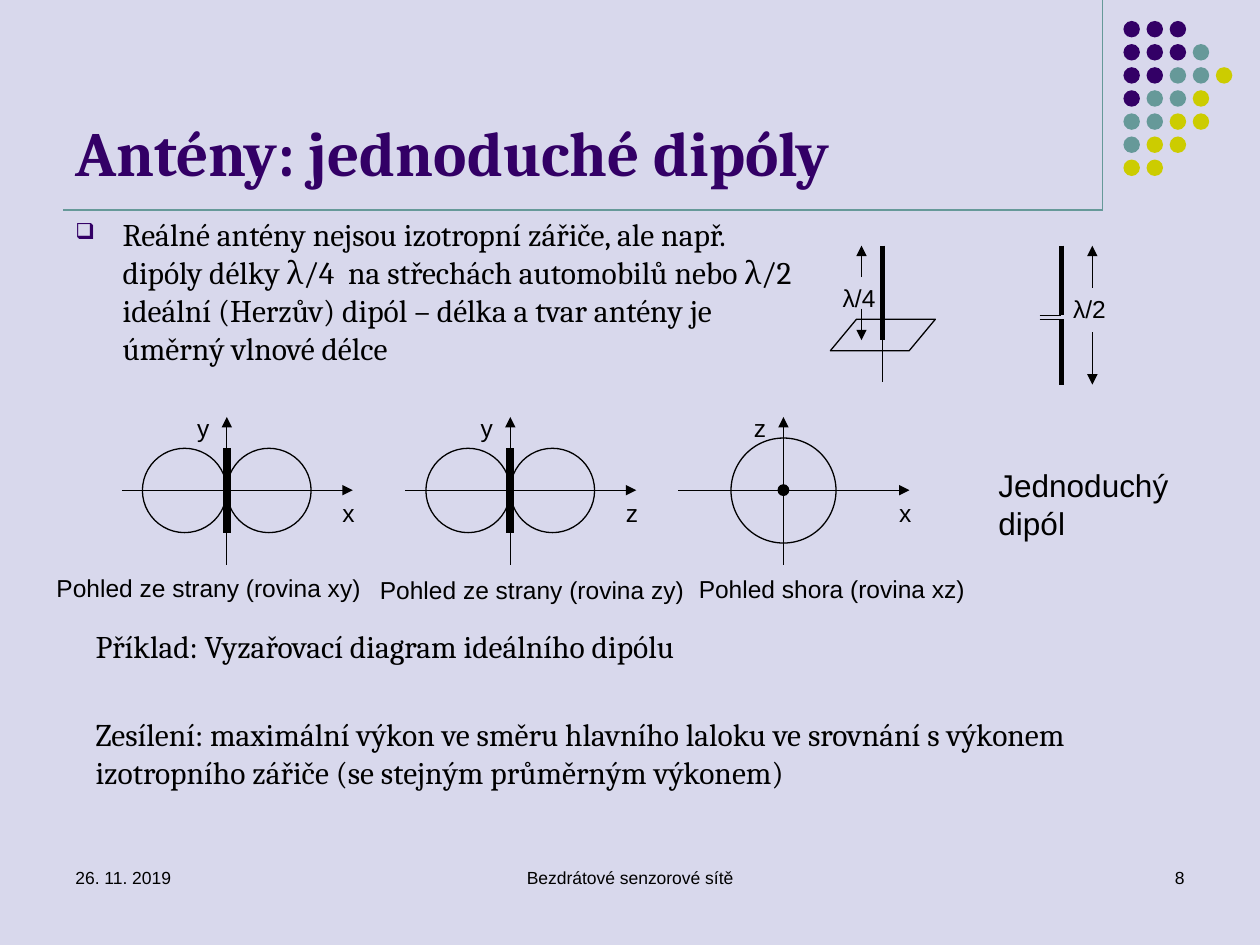
import pptx
import pptx.util
import pptx.dml.color
import pptx.enum.shapes
import pptx.enum.text
import pptx.oxml
import pptx.oxml.ns

Pt = pptx.util.Pt
RGB = pptx.dml.color.RGBColor
SHAPE = pptx.enum.shapes.MSO_SHAPE
ALIGN = pptx.enum.text.PP_ALIGN
ANCHOR = pptx.enum.text.MSO_ANCHOR

BACK = RGB(0xD8, 0xD8, 0xEC)
INK = RGB(0, 0, 0)
PLUM = RGB(0x33, 0x00, 0x66)
TEAL = RGB(0x66, 0x99, 0x99)
LIME = RGB(0xCC, 0xCC, 0x00)

DOTS = ["PPP", "PPPT", "PPTTL", "PTTL", "TTLL", "TLL", "LL"]
HUES = {"P": PLUM, "T": TEAL, "L": LIME}


def node(parent, tag, **attrs):
    item = pptx.oxml.ns.qn(tag)
    child = parent.makeelement(item, attrs)
    parent.append(child)
    return child


def line(slide, x1, y1, x2, y2, width=0.75, color=INK, arrow=False):
    link = slide.shapes.add_connector(
        pptx.enum.shapes.MSO_CONNECTOR.STRAIGHT, Pt(x1), Pt(y1), Pt(x2), Pt(y2))
    link.line.color.rgb = color
    link.line.width = Pt(width)
    if arrow:
        node(link.line._get_or_add_ln(), "a:tailEnd", type="triangle")
    node(link._element.spPr, "a:effectLst")


def shape(slide, kind, x, y, w, h, fill=None, edge=INK):
    form = slide.shapes.add_shape(kind, Pt(x), Pt(y), Pt(w), Pt(h))
    form.shadow.inherit = False
    if fill is None:
        form.fill.background()
    else:
        form.fill.solid()
        form.fill.fore_color.rgb = fill
    if edge is None:
        form.line.fill.background()
    else:
        form.line.color.rgb = edge
        form.line.width = Pt(0.75)
    return form


def disc(slide, x, y, size, fill=None, edge=INK):
    shape(slide, SHAPE.OVAL, x - size / 2, y - size / 2, size, size, fill, edge)


def text(slide, words, x, y, w, h, size, font="Arial", color=INK, bold=False,
         align=ALIGN.LEFT, anchor=ANCHOR.TOP, wrap=True, gaps=(0,)):
    frame = slide.shapes.add_textbox(Pt(x), Pt(y), Pt(w), Pt(h)).text_frame
    frame.word_wrap = wrap
    frame.vertical_anchor = anchor
    frame.text = words
    for para, gap in zip(frame.paragraphs, gaps):
        para.alignment = align
        para.space_before = Pt(gap)
        para.font.name = font
        para.font.size = Pt(size)
        para.font.bold = bold
        para.font.color.rgb = color
    return frame


def bullet(para):
    props = para._p.get_or_add_pPr()
    props.set("marL", str(Pt(27)))
    props.set("indent", str(-Pt(27)))
    node(node(props, "a:buClr"), "a:srgbClr", val=str(PLUM))
    node(props, "a:buSzPct", val="70000")
    node(props, "a:buChar", char="❑")


def frame_marks(slide):
    line(slide, 630, 0, 630, 120, color=TEAL)
    line(slide, 36, 120, 630, 120, color=TEAL)
    for row, codes in enumerate(DOTS):
        for col, code in enumerate(codes):
            disc(slide, 646.7 + 13.2 * col, 16.7 + 13.2 * row, 9.4, HUES[code], None)


def axes(slide, x, up, side):
    line(slide, x, 322.6, x, 238.3, arrow=True)
    line(slide, x - 60, 280.1, x + 72, 280.1, arrow=True)
    text(slide, up, x - 24, 232.6, 21.6, 24, 14, wrap=False)
    text(slide, side, x + 59, 280.8, 21.6, 24, 14, wrap=False)


def side_view(slide, x, up, side):
    axes(slide, x, up, side)
    for shift in (-24.1, 24.1):
        disc(slide, x + shift, 280.3, 48.2)
    line(slide, x, 256.2, x, 304.4, 4.5)


def top_view(slide, x, up, side):
    axes(slide, x, up, side)
    disc(slide, x, 280.3, 60)
    disc(slide, x, 280.1, 6, INK)


def quarter(slide):
    plate = shape(slide, SHAPE.PARALLELOGRAM, 474.5, 182.4, 60, 18)
    plate.adjustments[0] = 0.83
    text(slide, "λ/4", 474.5, 158.4, 36, 24, 14)
    line(slide, 504.2, 140.4, 504.2, 194.4, 3)
    line(slide, 504.2, 194.4, 504.2, 218.2)
    line(slide, 492.3, 158.4, 492.3, 140.4, arrow=True)
    line(slide, 492.3, 176.4, 492.3, 194.4, arrow=True)


def half(slide):
    line(slide, 606.5, 140.4, 606.5, 180.2, 3)
    line(slide, 606.5, 182.4, 606.5, 220.2, 3)
    for y in (180.2, 182.4):
        line(slide, 594, y, 606.2, y)
    text(slide, "λ/2", 606.2, 164.4, 36, 24, 14)
    line(slide, 624.2, 164.4, 624.2, 140.4, arrow=True)
    line(slide, 624.2, 190, 624.2, 219.8, arrow=True)


def main():
    deck = pptx.Presentation()
    deck.slide_width, deck.slide_height = Pt(720), Pt(540)
    slide = deck.slides.add_slide(deck.slide_layouts[6])
    slide.background.fill.solid()
    slide.background.fill.fore_color.rgb = BACK

    frame_marks(slide)
    text(slide, "Antény: jednoduché dipóly", 36, 9.4, 594, 102.2, 36,
         "Cambria", PLUM, True, anchor=ANCHOR.BOTTOM)
    body = text(slide, "Reálné antény nejsou izotropní zářiče, ale např. dipóly "
                "délky λ/4  na střechách automobilů nebo λ/2 ideální (Herzův) dipól "
                "– délka a tvar antény je úměrný vlnové délce",
                36, 119.5, 432, 98.6, 18, "Cambria", gaps=(3.6,))
    bullet(body.paragraphs[0])

    side_view(slide, 129.6, "y", "x")
    side_view(slide, 291.6, "y", "z")
    top_view(slide, 447.7, "z", "x")
    for words, x, y, w in (("Pohled ze strany (rovina xy)", 25.2, 324, 189.4),
                           ("Pohled ze strany (rovina zy)", 210, 325, 189.4),
                           ("Pohled shora (rovina xz)", 392.2, 324.7, 171.4)):
        text(slide, words, x, y, w, 24.5, 14, wrap=False)
    text(slide, "Jednoduchý dipól", 563.5, 262.8, 112.3, 51, 18)
    quarter(slide)
    half(slide)

    text(slide, "Příklad: Vyzařovací diagram ideálního dipólu\n"
         "Zesílení: maximální výkon ve směru hlavního laloku ve srovnání s výkonem "
         "izotropního zářiče (se stejným průměrným výkonem)",
         47.5, 355, 586, 98.6, 18, "Cambria", gaps=(3.6, 28.7))
    for words, x, w, align in (("26. 11. 2019", 36, 168, ALIGN.LEFT),
                               ("Bezdrátové senzorové sítě", 246, 228, ALIGN.CENTER),
                               ("8", 516, 168, ALIGN.RIGHT)):
        text(slide, words, x, 491.8, w, 36, 10, align=align)
    deck.save("out.pptx")


if __name__ == "__main__":
    main()
